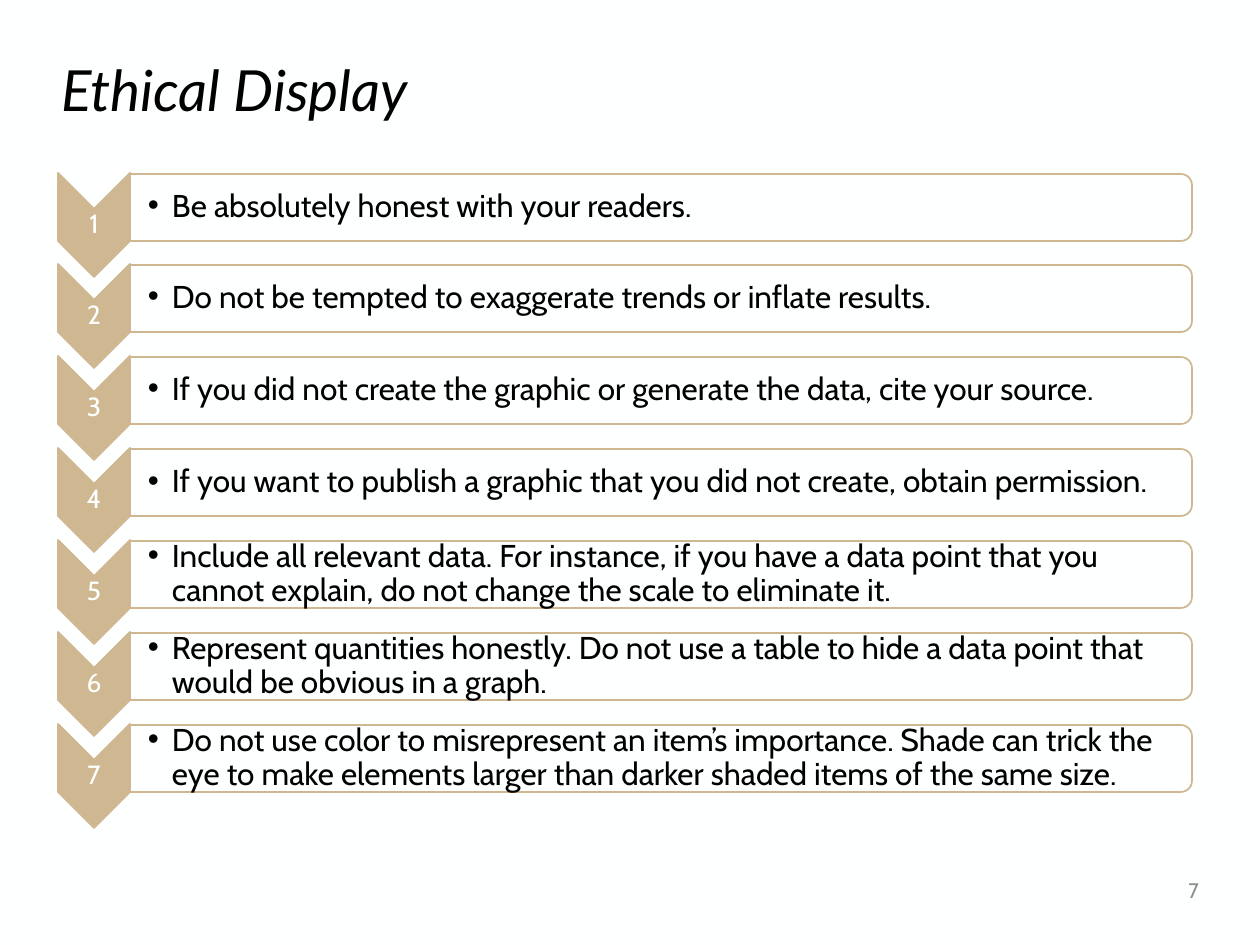
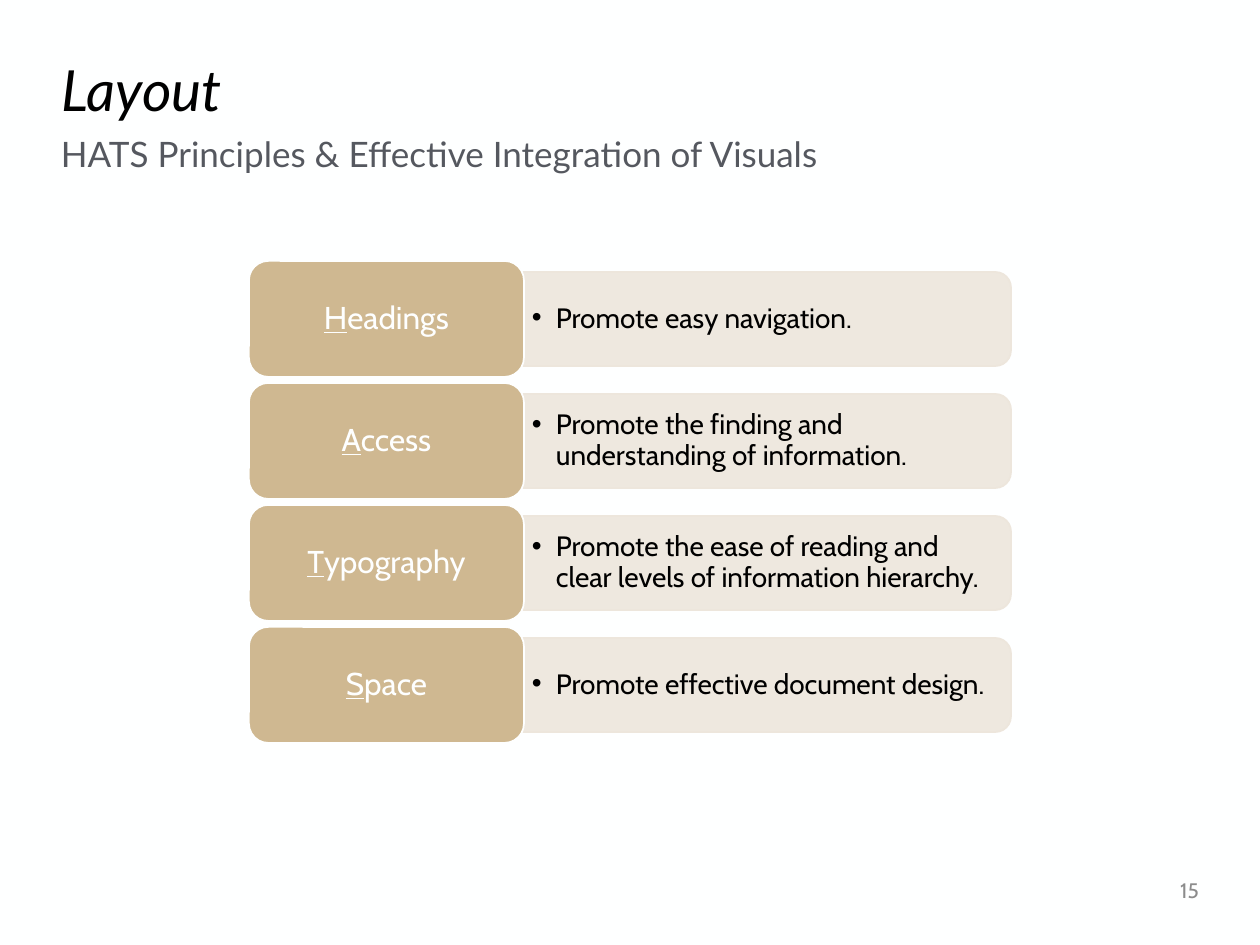
from lxml.etree import SubElement
from pptx import Presentation
from pptx.dml.color import RGBColor
from pptx.enum.shapes import MSO_SHAPE as Kind
from pptx.enum.text import MSO_ANCHOR as Anchor, MSO_AUTO_SIZE as AutoSize, PP_ALIGN as Align
from pptx.oxml.ns import qn
from pptx.util import Pt

PX = 914400 // 126
TAN, SAND, WHITE, BLACK = "CFB891", "EDE6DC", "FEFFFF", "000000"
SLATE, GRAY = "55585F", "8C8C8C"
HEADING_FONT, BODY_FONT = "Lato", "Cabin"
BULLET_INDENT = 24 * PX
rgb = RGBColor.from_string


def add_box(slide, kind, left, top, width, height, fill, line, turned=False, opacity=100):
    if turned:
        left, top = left + (width - height) / 2, top + (height - width) / 2
        width, height = height, width
    box = slide.shapes.add_shape(kind, *(int(n * PX) for n in (left, top, width, height)))
    box.rotation = 90 if turned else 0
    box.shadow.inherit = False
    box.fill.solid()
    box.fill.fore_color.rgb = rgb(fill)
    box.line.color.rgb = rgb(line)
    box.line.width = Pt(1)
    if opacity < 100:
        tint = box.fill._xPr.find(qn("a:solidFill"))[0]
        SubElement(tint, qn("a:alpha"), val=str(opacity * 1000))
    return box


def write(box, spans, size, color, font=BODY_FONT, align=Align.LEFT, insets=(13, 6),
          anchor=Anchor.MIDDLE, bullet=False):
    frame = box.text_frame
    frame.word_wrap = True
    frame.auto_size = AutoSize.NONE
    frame.vertical_anchor = anchor
    frame.margin_left = frame.margin_right = insets[0] * PX
    frame.margin_top = frame.margin_bottom = insets[1] * PX
    para = frame.paragraphs[0]
    para.alignment = align
    para.line_spacing = 0.9
    if bullet:
        properties = para._p.get_or_add_pPr()
        properties.set("marL", str(BULLET_INDENT))
        properties.set("indent", str(-BULLET_INDENT))
        SubElement(properties, qn("a:buFont"), typeface="Arial")
        SubElement(properties, qn("a:buChar"), char="•")
    para.font.name = font
    para.font.size = Pt(size)
    para.font.color.rgb = rgb(color)
    for text in spans:
        para.add_run().text = text
    return para


deck = Presentation()
deck.slide_width, deck.slide_height = 1260 * PX, 945 * PX
background = deck.slide_master.background.fill
background.solid()
background.fore_color.rgb = rgb(WHITE)

pages = []
for heading, number in (("Ethical Display", "7"), ("Layout", "15")):
    page = deck.slides.add_slide(deck.slide_layouts[5])
    title = page.shapes.title
    title.left, title.top, title.width, title.height = 48 * PX, 53 * PX, 1164 * PX, 81 * PX
    write(title, [heading], 32.4, BLACK, HEADING_FONT).font.italic = True
    footer = page.shapes.add_textbox(1061 * PX, 867 * PX, 151 * PX, 50 * PX)
    write(footer, [number], 12, GRAY, align=Align.RIGHT)
    pages.append(page)
ethics_page, layout_page = pages

rules = [
    "Be absolutely honest with your readers.",
    "Do not be tempted to exaggerate trends or inflate results.",
    "If you did not create the graphic or generate the data, cite your source.",
    "If you want to publish a graphic that you did not create, obtain permission.",
    "Include all relevant data. For instance, if you have a data point that you cannot explain, "
    "do not change the scale to eliminate it.",
    "Represent quantities honestly. Do not use a table to hide a data point that would be "
    "obvious in a graph.",
    "Do not use color to misrepresent an item’s importance. Shade can trick the eye to make "
    "elements larger than darker shaded items of the same size.",
]
for index, rule in enumerate(rules):
    top = 173 + 551 * index // 6
    add_box(ethics_page, Kind.CHEVRON, 58, top, 72, 104, TAN, TAN, turned=True)
    step = ethics_page.shapes.add_textbox(58 * PX, (top + 36) * PX, 72 * PX, 32 * PX)
    write(step, [str(index + 1)], 15, WHITE, align=Align.CENTER, insets=(1, 1))
    add_box(ethics_page, Kind.ROUND_2_SAME_RECTANGLE, 130, top + 1, 1062, 67, WHITE, TAN,
            turned=True, opacity=90)
    rule_box = ethics_page.shapes.add_textbox(130 * PX, (top + 4) * PX, 1058 * PX, 60 * PX)
    write(rule_box, [rule], 18, BLACK, insets=(1, 1), bullet=True)
    rule_box.text_frame.margin_left = 18 * PX

subtitle = layout_page.shapes.add_textbox(48 * PX, 131 * PX, 1165 * PX, 50 * PX)
write(subtitle, ["HATS Principles & Effective Integration of Visuals"], 20, SLATE,
      HEADING_FONT, anchor=Anchor.TOP)

principles = [
    ("Headings", "Promote easy navigation."),
    ("Access", "Promote the finding and understanding of information."),
    ("Typography", "Promote the ease of reading and clear levels of information hierarchy."),
    ("Space", "Promote effective document design."),
]
for index, (principle, purpose) in enumerate(principles):
    top = 261 + 122 * index
    add_box(layout_page, Kind.ROUND_2_SAME_RECTANGLE, 523, top + 11, 488, 94, SAND, SAND,
            turned=True, opacity=90)
    purpose_box = layout_page.shapes.add_textbox(523 * PX, (top + 16) * PX, 483 * PX, 84 * PX)
    write(purpose_box, [purpose], 16, BLACK, insets=(9, 4), bullet=True)
    label = add_box(layout_page, Kind.ROUNDED_RECTANGLE, 249, top, 275, 116, TAN, WHITE)
    para = write(label, [principle[0], principle[1:]], 18, WHITE, align=Align.CENTER,
                 insets=(9, 5))
    para.runs[0].font.underline = True

deck.save("out.pptx")
